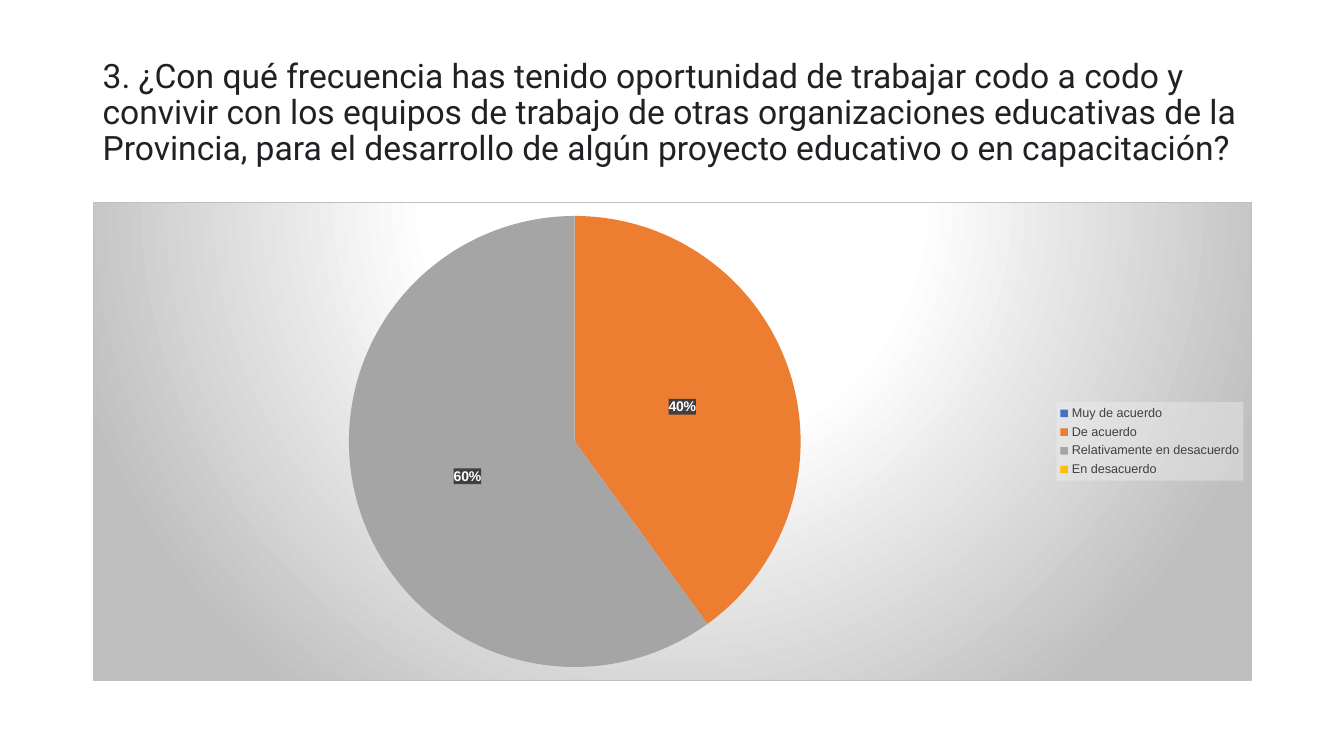
from lxml.etree import SubElement
from pptx import Presentation
from pptx.chart.data import CategoryChartData
from pptx.dml.color import RGBColor
from pptx.enum.chart import XL_CHART_TYPE as ChartType
from pptx.enum.chart import XL_LABEL_POSITION as LabelPosition
from pptx.enum.chart import XL_LEGEND_POSITION as LegendPosition
from pptx.enum.text import MSO_ANCHOR as Anchor
from pptx.oxml import parse_xml
from pptx.oxml.ns import nsdecls, qn
from pptx.util import Inches, Pt

INK = RGBColor(0x20, 0x21, 0x24)
BLACK = RGBColor(0, 0, 0)
WHITE = RGBColor(0xFF, 0xFF, 0xFF)
DARK_GREY = RGBColor(0x40, 0x40, 0x40)
PALE_GREY = RGBColor(0xF2, 0xF2, 0xF2)
EDGE_GREY = RGBColor(0xBF, 0xBF, 0xBF)

QUESTION = (
    "3. ¿Con qué frecuencia has tenido oportunidad de trabajar codo a codo y "
    "convivir con los equipos de trabajo de otras organizaciones educativas de la "
    "Provincia, para el desarrollo de algún proyecto educativo o en capacitación?"
)
ANSWERS = [
    ("Muy de acuerdo", 0, RGBColor(0x44, 0x72, 0xC4)),
    ("De acuerdo", 40, RGBColor(0xED, 0x7D, 0x31)),
    ("Relativamente en desacuerdo", 60, RGBColor(0xA5, 0xA5, 0xA5)),
    ("En desacuerdo", 0, RGBColor(0xFF, 0xC0, 0x00)),
]


def style_font(font, size, color, name="Arial", bold=False):
    """Set the face, size, colour and weight of a font."""
    font.name, font.size, font.bold = name, Pt(size), bold
    font.color.rgb = color


def set_background(chart_part, fill_xml):
    """Give a chart part a background, placed before its text properties."""
    background = parse_xml(f"<c:spPr {nsdecls('c', 'a')}>{fill_xml}</c:spPr>")
    chart_part.find(qn("c:txPr")).addprevious(background)


def translucent(color, percent):
    """Return a solid fill with the given opacity."""
    return (f'<a:solidFill><a:srgbClr val="{color}"><a:alpha val="{percent * 1000}"/>'
            '</a:srgbClr></a:solidFill>')


def radial_panel():
    """Return the radial gradient and border behind the chart."""
    stops = "".join(
        f'<a:gs pos="{position * 1000}"><a:srgbClr val="{color}"/></a:gs>'
        for position, color in ((0, WHITE), (39, WHITE), (100, EDGE_GREY))
    )
    return (f'<a:gradFill><a:gsLst>{stops}</a:gsLst><a:path path="circle">'
            '<a:fillToRect l="50000" t="-80000" r="50000" b="180000"/></a:path></a:gradFill>'
            f'<a:ln w="{Pt(0.75)}"><a:solidFill><a:srgbClr val="{EDGE_GREY}"/>'
            '</a:solidFill></a:ln>')


def add_question(slide, left, top, width, height):
    """Write the survey question in its box."""
    frame = slide.shapes.add_textbox(left, top, width, height).text_frame
    frame.word_wrap = True
    frame.vertical_anchor = Anchor.MIDDLE
    paragraph = frame.paragraphs[0]
    paragraph.line_spacing = 0.9
    question = paragraph.add_run()
    question.text = QUESTION
    style_font(question.font, 24, INK, "Roboto")


def label_slices(pie):
    """Show percentages on the slices, leaving out the empty ones."""
    labels = pie.data_labels
    style_font(labels.font, 10, WHITE, bold=True)
    labels.show_percentage = True
    labels.show_value = False
    labels.number_format, labels.number_format_is_linked = "0%", False
    labels.position = LabelPosition.CENTER
    set_background(labels._element, translucent(DARK_GREY, 90))
    empty = [index for index, (_, share, _) in enumerate(ANSWERS) if not share]
    for order, index in enumerate(empty):
        hidden = parse_xml(f"<c:dLbl {nsdecls('c')}/>")
        SubElement(hidden, qn("c:idx")).set("val", str(index))
        SubElement(hidden, qn("c:delete")).set("val", "1")
        labels._element.insert(order, hidden)


def add_answers_pie(slide, left, top, width, height):
    """Draw the pie of answers with its legend in the given box."""
    answers = CategoryChartData()
    answers.categories = [answer for answer, _, _ in ANSWERS]
    answers.add_series("Series 1", [share for _, share, _ in ANSWERS])
    chart = slide.shapes.add_chart(
        ChartType.PIE, left, top, width, height, answers).chart
    chart.has_title = False
    style_font(chart.font, 10, BLACK)
    set_background(chart._chartSpace, radial_panel())

    chart.has_legend = True
    legend = chart.legend
    legend.position = LegendPosition.RIGHT
    legend.include_in_layout = False
    style_font(legend.font, 9, DARK_GREY)
    set_background(legend._element, translucent(PALE_GREY, 39))

    plot = chart.plots[0]
    plot.vary_by_categories = True
    pie = plot.series[0]
    for index, (_, _, color) in enumerate(ANSWERS):
        fill = pie.points[index].format.fill
        fill.solid()
        fill.fore_color.rgb = color
    label_slices(pie)


def main():
    """Build the slide and save it."""
    deck = Presentation()
    deck.slide_width, deck.slide_height = Inches(13.33), Inches(7.5)
    slide = deck.slides.add_slide(deck.slide_layouts[6])
    left, width = Inches(0.92), Inches(11.5)
    add_question(slide, left, Inches(0.4), width, Inches(1.45))
    add_answers_pie(slide, left, Inches(2), width, Inches(4.76))
    deck.save("out.pptx")


if __name__ == "__main__":
    main()
